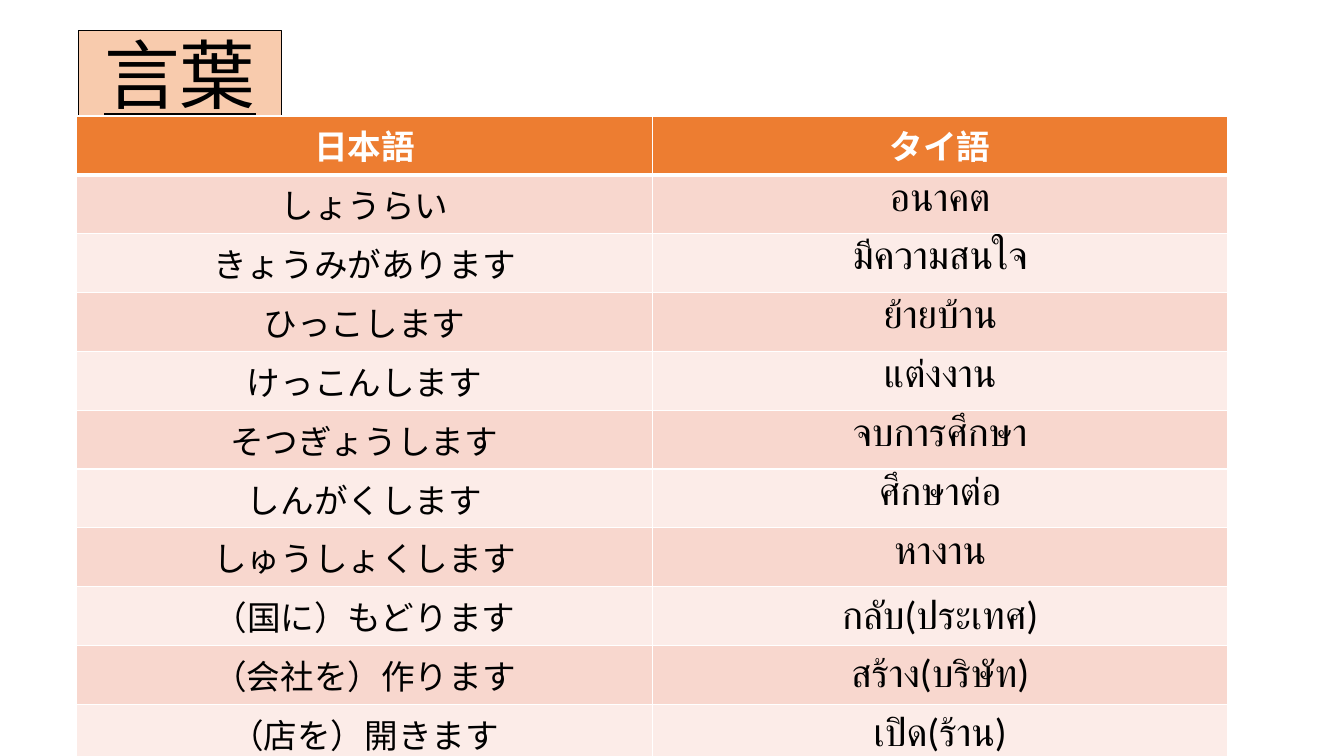
from dataclasses import dataclass

from lxml import etree
from pptx import Presentation
from pptx.dml.color import RGBColor
from pptx.enum.shapes import MSO_SHAPE
from pptx.enum.text import MSO_ANCHOR, PP_ALIGN
from pptx.oxml.ns import qn
from pptx.util import Inches, Pt

RECT = MSO_SHAPE.RECTANGLE
MIDDLE = MSO_ANCHOR.MIDDLE
CENTER = PP_ALIGN.CENTER
FONT = "Calibri"
BLACK, WHITE, ORANGE, PEACH = "000000", "FFFFFF", "ED7D31", "F8CBAD"
BANDS = ("F8D7CE", "FCECE8")


@dataclass
class Word:
    japanese: str
    thai: str


HEADER = Word("日本語", "タイ語")
WORDS = [
    Word("しょうらい", "อนาคต"),
    Word("きょうみがあります", "มีความสนใจ"),
    Word("ひっこします", "ย้ายบ้าน"),
    Word("けっこんします", "แต่งงาน"),
    Word("そつぎょうします", "จบการศึกษา"),
    Word("しんがくします", "ศึกษาต่อ"),
    Word("しゅうしょくします", "หางาน"),
    Word("（国に）もどります", "กลับ(ประเทศ)"),
    Word("（会社を）作ります", "สร้าง(บริษัท)"),
    Word("（店を）開きます", "เปิด(ร้าน)"),
]


def rgb(value: str) -> RGBColor:
    return RGBColor.from_string(value)


def write(tf, text: str, color: str, **formats) -> None:
    p = tf.paragraphs[0]
    p.alignment = CENTER
    r = p.add_run()
    r.text = text
    r.font.color.rgb = rgb(color)
    for name, value in {"name": FONT, **formats}.items():
        setattr(r.font, name, value)


def set_borders(cell, bottom: float) -> None:
    tc_pr = cell._tc.get_or_add_tcPr()
    widths = {"a:lnL": 1, "a:lnR": 1, "a:lnT": 1, "a:lnB": bottom}
    for tag, width in widths.items():
        ln = etree.SubElement(tc_pr, qn(tag), w=str(Pt(width)))
        fill = etree.SubElement(ln, qn("a:solidFill"))
        etree.SubElement(fill, qn("a:srgbClr"), val=WHITE)


def style_cell(cell, fill: str, bottom: float) -> None:
    set_borders(cell, bottom)
    cell.fill.solid()
    cell.fill.fore_color.rgb = rgb(fill)


def add_title(s) -> None:
    sp = s.shapes.add_shape(RECT, Inches(0.78), Inches(0.3), Inches(2.01), Inches(0.96))
    sp.shadow.inherit = False
    sp.fill.solid()
    sp.fill.fore_color.rgb = rgb(PEACH)
    sp.line.color.rgb = rgb(BLACK)
    sp.line.width = Pt(0.75)
    tf = sp.text_frame
    tf.word_wrap = True
    tf.vertical_anchor = MIDDLE
    write(tf, "言葉", BLACK, size=Pt(54), underline=True)
    tf.paragraphs[0].line_spacing = 0.9


def add_words(s) -> None:
    table = s.shapes.add_table(
        len(WORDS) + 1, 2, Inches(0.76), Inches(1.15), Inches(11.42), Inches(5.55)
    ).table
    for column in table.columns:
        column.width = Inches(5.71)
    for i, word in enumerate([HEADER, *WORDS]):
        header = i == 0
        table.rows[i].height = Inches(0.45 if header else 0.51)
        fill = ORANGE if header else BANDS[(i - 1) % 2]
        color = WHITE if header else BLACK
        sizes = (24, 24) if header else (24, 28)
        for j, text in enumerate((word.japanese, word.thai)):
            cell = table.cell(i, j)
            style_cell(cell, fill, 3 if header else 1)
            write(cell.text_frame, text, color, size=Pt(sizes[j]), bold=header)


def main() -> None:
    prs = Presentation()
    prs.slide_width, prs.slide_height = Inches(13.33), Inches(7.5)
    s = prs.slides.add_slide(prs.slide_layouts[6])
    add_title(s)
    add_words(s)
    prs.save("out.pptx")


if __name__ == "__main__":
    main()
